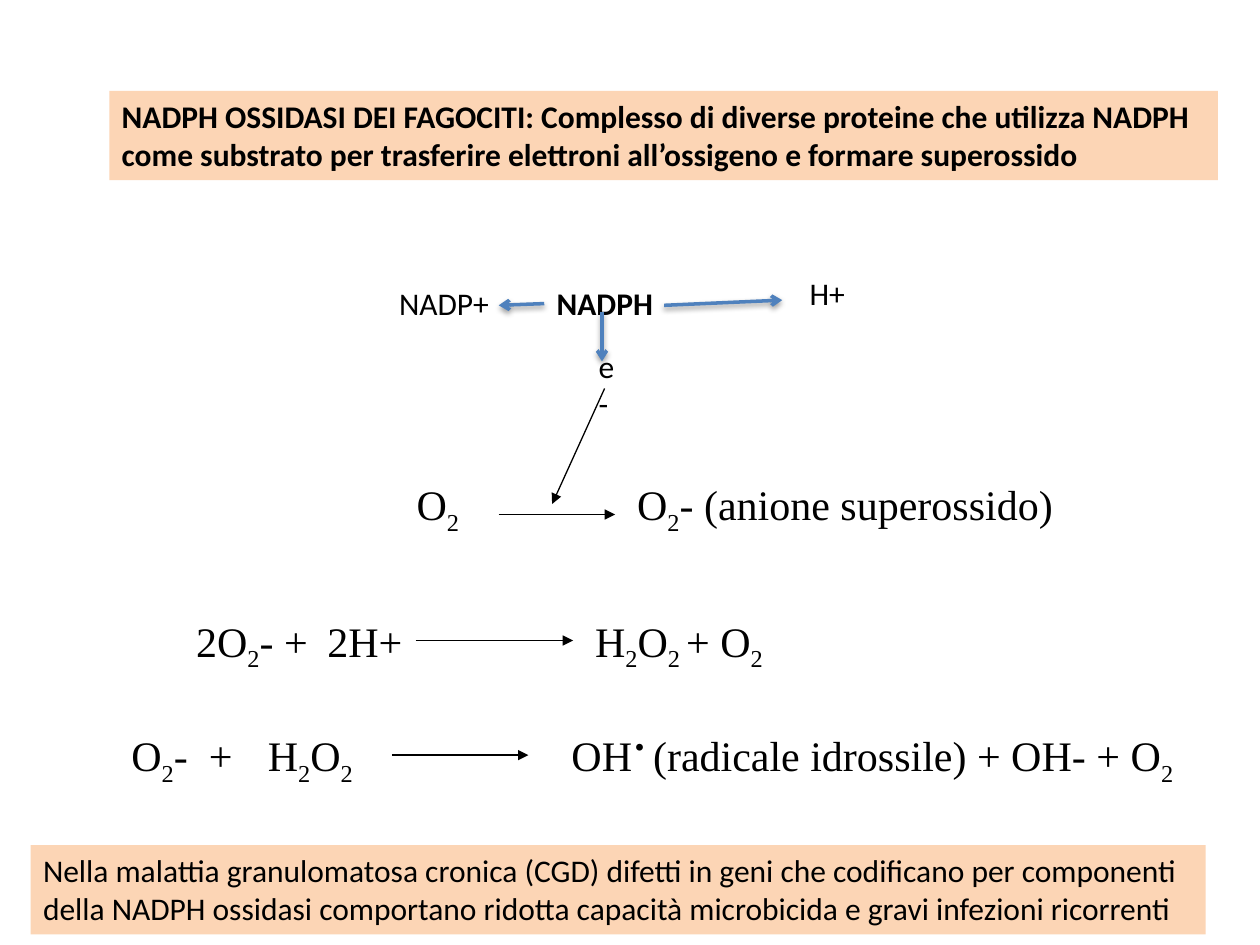
import pptx
import pptx.util
import pptx.dml.color
import pptx.enum.shapes
import pptx.enum.text
import pptx.oxml
import pptx.oxml.ns

Pt = pptx.util.Pt
COLORS = {"text": "000000", "panel": "FCD5B5", "reaction": "000000", "transfer": "4F81BD"}
BODY_FONT = "Calibri"
FORMULA_FONT = "Times New Roman"

SHADOW = (
    '<a:outerShdw blurRad="40000" dist="20000" dir="5400000" rotWithShape="0">'
    '<a:srgbClr val="000000"><a:alpha val="38000"/></a:srgbClr></a:outerShdw>'
)


def rgb(name):
    return pptx.dml.color.RGBColor.from_string(COLORS[name])


def format_span(span, font, size, bold):
    span.font.name = font
    span.font.size = Pt(size)
    span.font.bold = bold
    span.font.color.rgb = rgb("text")


def prepare_frame(box):
    frame = box.text_frame
    frame.word_wrap = False
    frame.auto_size = pptx.enum.text.MSO_AUTO_SIZE.SHAPE_TO_FIT_TEXT
    frame.vertical_anchor = pptx.enum.text.MSO_ANCHOR.TOP
    return frame


def add_label(page, text, left, top, width, bold=False):
    box = page.shapes.add_textbox(Pt(left), Pt(top), Pt(width), Pt(29))
    frame = prepare_frame(box)
    frame.text = text
    format_span(frame.paragraphs[0].runs[0], BODY_FONT, 18, bold)


def add_formula(page, text, left, top, width, bold=False):
    """Write a formula; every second part between underscores is a subscript."""
    box = page.shapes.add_textbox(Pt(left), Pt(top), Pt(width), Pt(36))
    para = prepare_frame(box).paragraphs[0]
    for index, part in enumerate(text.split("_")):
        if not part:
            continue
        span = para.add_run()
        span.text = part
        format_span(span, FORMULA_FONT, 24, bold)
        if index % 2:
            span.font._element.set("baseline", "-25000")


def add_panel(page, lines, left, top, width, bold=False):
    box = page.shapes.add_shape(
        pptx.enum.shapes.MSO_SHAPE.RECTANGLE, Pt(left), Pt(top), Pt(width), Pt(51))
    box.shadow.inherit = False
    box.fill.solid()
    box.fill.fore_color.rgb = rgb("panel")
    box.line.fill.background()
    frame = prepare_frame(box)
    frame.text = "\n".join(lines)
    for para in frame.paragraphs:
        para.alignment = pptx.enum.text.PP_ALIGN.LEFT
        format_span(para.runs[0], BODY_FONT, 18, bold)


def add_arrow(page, start, end, color, width, head, effect=""):
    arrow = page.shapes.add_connector(
        pptx.enum.shapes.MSO_CONNECTOR.STRAIGHT, *map(Pt, start + end))
    arrow.line.color.rgb = rgb(color)
    arrow.line.width = Pt(width)
    namespace = pptx.oxml.ns.nsdecls("a")
    line = arrow.line._get_or_add_ln()
    line.append(pptx.oxml.parse_xml(f'<a:tailEnd {namespace} type="{head}"/>'))
    line.addnext(pptx.oxml.parse_xml(f"<a:effectLst {namespace}>{effect}</a:effectLst>"))


def main():
    deck = pptx.Presentation()
    deck.slide_width, deck.slide_height = Pt(720), Pt(540)
    page = deck.slides.add_slide(deck.slide_layouts[6])

    # Reactions: text, left, top, width
    formulas = [
        ("O_2", 231, 270, 39.5),
        ("O_2_- (anione superossido)", 357, 270, 255.5),
        ("2O_2_- +", 105, 348, 79),
        ("2H+", 180, 348, 57.5),
        ("H_2_O_2 _+ O_2", 333, 348, 114),
        ("O_2_-  +", 68, 413.5, 73.5),
        ("H_2_O_2", 146, 413.5, 65),
        ("OH  (radicale idrossile) + OH- + O_2", 319.5, 413.5, 363),
    ]
    for formula in formulas:
        add_formula(page, *formula)
    # Unpaired electron of the hydroxyl radical
    add_formula(page, ".", 355.5, 401.5, 20, bold=True)

    # Reaction arrows
    for start, end in [
        ((285, 294), (351.5, 294)),
        ((345.5, 222), (315.5, 288)),
        ((237.5, 366), (327.5, 366)),
        ((224, 431.5), (302, 431.5)),
    ]:
        add_arrow(page, start, end, "reaction", 0.75, "triangle")

    # Title panel
    add_panel(page, [
        "NADPH OSSIDASI DEI FAGOCITI: Complesso di diverse proteine che utilizza NADPH",
        "come substrato per trasferire elettroni all’ossigeno e formare superossido",
    ], 62.5, 52, 633.5, bold=True)

    # NADPH and its products
    add_label(page, "NADPH", 311, 159, 70, bold=True)
    add_label(page, "H+", 455.5, 153, 34.5)
    add_label(page, "e-", 335, 194.5, 28.5)
    add_label(page, "NADP+", 221, 158.5, 66)
    for start, end in [
        ((379.5, 174.5), (447, 171.5)),
        ((344, 178.5), (344, 206.5)),
        ((311, 173.5), (285, 174.5)),
    ]:
        add_arrow(page, start, end, "transfer", 2, "arrow", SHADOW)

    # Clinical note panel
    add_panel(page, [
        "Nella malattia granulomatosa cronica (CGD) difetti in geni che codificano per componenti",
        "della NADPH ossidasi comportano ridotta capacità microbicida e gravi infezioni ricorrenti",
    ], 17.5, 483, 671.5)

    deck.save("out.pptx")


if __name__ == "__main__":
    main()
